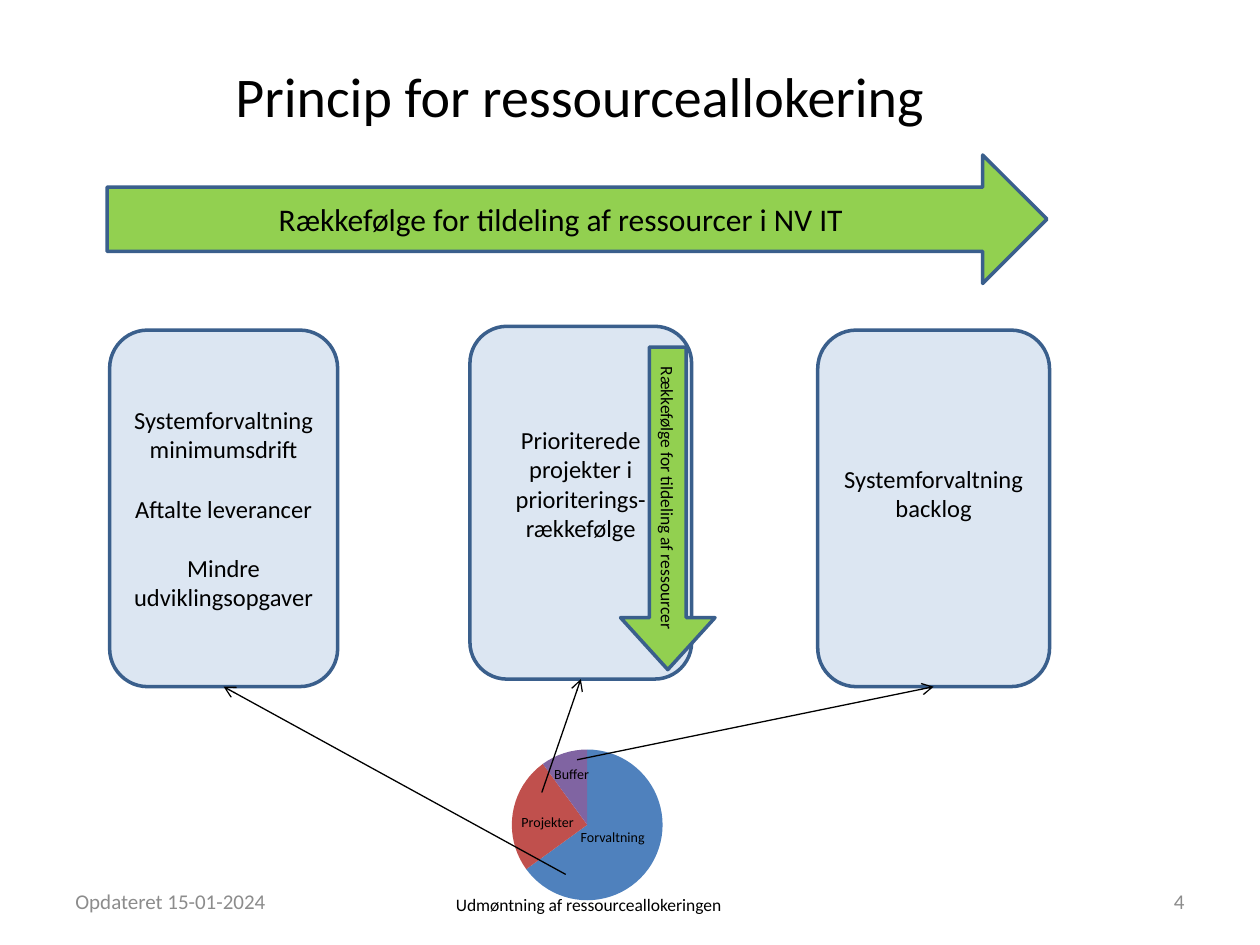
from lxml.etree import SubElement
from pptx import Presentation
from pptx.chart.data import CategoryChartData
from pptx.dml.color import RGBColor
from pptx.enum.chart import XL_CHART_TYPE
from pptx.enum.shapes import MSO_CONNECTOR, MSO_SHAPE
from pptx.enum.text import MSO_ANCHOR, PP_ALIGN
from pptx.oxml import parse_xml
from pptx.oxml.ns import nsdecls, qn
from pptx.util import Inches, Pt

FONT = "Calibri"
BLACK, GREY = "000000", "8C8C8C"
GREEN, PALE_BLUE, OUTLINE = "92D050", "DCE6F2", "3A5F8C"
BOTTOM = 2


def color(hex_string):
    return RGBColor.from_string(hex_string)


def write(frame, paragraphs, size, align, ink=BLACK, gap=0):
    """Fill a text frame, with gap points between its paragraphs."""
    frame.word_wrap = True
    for index, text in enumerate(paragraphs):
        para = frame.paragraphs[0] if index == 0 else frame.add_paragraph()
        para.text = text
        para.alignment = align
        para.font.name = FONT
        para.font.size = Pt(size)
        para.font.color.rgb = color(ink)
        if index:
            para.space_before = Pt(gap)


def add_label(page, text, left, top, width, height, size, ink=BLACK,
              align=PP_ALIGN.LEFT, anchor=MSO_ANCHOR.TOP):
    box = page.shapes.add_textbox(Inches(left), Inches(top), Inches(width), Inches(height))
    box.text_frame.vertical_anchor = anchor
    write(box.text_frame, [text], size, align, ink)


def add_block(page, kind, left, top, width, height, fill, paragraphs, size, gap=0):
    """Add an outlined shape with centred text."""
    block = page.shapes.add_shape(kind, Inches(left), Inches(top), Inches(width), Inches(height))
    block.shadow.inherit = False
    block.fill.solid()
    block.fill.fore_color.rgb = color(fill)
    block.line.color.rgb = color(OUTLINE)
    block.line.width = Pt(2)
    block.text_frame.vertical_anchor = MSO_ANCHOR.MIDDLE
    write(block.text_frame, paragraphs, size, PP_ALIGN.CENTER, gap=gap)
    return block


def add_pointer(page, left, top, target):
    """Add an arrow from a point to the bottom of the target."""
    pointer = page.shapes.add_connector(
        MSO_CONNECTOR.STRAIGHT, Inches(left), Inches(top), Inches(left), Inches(top))
    pointer.end_connect(target, BOTTOM)
    pointer.line.color.rgb = color(BLACK)
    pointer.line.width = Pt(0.75)
    SubElement(pointer.line._get_or_add_ln(), qn("a:tailEnd"), type="arrow")
    SubElement(pointer._element.spPr, qn("a:effectLst"))


def add_allocation_pie(page):
    data = CategoryChartData()
    data.categories = ["1", "2", "3", "4"]
    data.add_series("Series 1", (65, 25, 0, 10))
    chart = page.shapes.add_chart(
        XL_CHART_TYPE.PIE, Inches(3.72), Inches(5.8), Inches(1.9), Inches(1.48), data).chart
    chart.has_legend = False
    chart.has_title = False
    chart.font.name = FONT
    chart.font.size = Pt(18)
    chart.font.color.rgb = color(BLACK)
    plot = chart.plots[0]
    plot.vary_by_categories = True
    for index, fill in enumerate(("4F81BD", "C0504D", "9BBB59", "8064A2")):
        slice_format = plot.series[0].points[index].format
        slice_format.fill.solid()
        slice_format.fill.fore_color.rgb = color(fill)
    area = chart._chartSpace.chart.plotArea
    for old_layout in area.findall(qn("c:layout")):
        area.remove(old_layout)
    area.insert(0, parse_xml(
        f'<c:layout {nsdecls("c")}><c:manualLayout><c:layoutTarget val="inner"/>'
        '<c:xMode val="edge"/><c:yMode val="edge"/><c:x val="0.18"/><c:y val="0.1"/>'
        '<c:w val="0.63"/><c:h val="0.81"/></c:manualLayout></c:layout>'))


def main():
    deck = Presentation()
    deck.slide_width, deck.slide_height = Inches(10), Inches(7.5)
    page = deck.slides.add_slide(deck.slide_layouts[6])

    add_allocation_pie(page)
    add_block(page, MSO_SHAPE.RIGHT_ARROW, 0.85, 1.23, 7.46, 1.02, GREEN,
              ["Rækkefølge for tildeling af ressourcer i NV IT"], 18)

    maintenance = add_block(
        page, MSO_SHAPE.ROUNDED_RECTANGLE, 0.87, 2.62, 1.81, 2.83, PALE_BLUE,
        ["Systemforvaltning minimumsdrift", "Aftalte leverancer",
         "Mindre udviklingsopgaver"], 14, gap=17)
    projects = add_block(
        page, MSO_SHAPE.ROUNDED_RECTANGLE, 3.73, 2.59, 1.76, 2.8, PALE_BLUE,
        ["Prioriterede projekter i prioriterings-rækkefølge"], 14)
    projects.text_frame.margin_bottom = Inches(0.35)
    backlog = add_block(
        page, MSO_SHAPE.ROUNDED_RECTANGLE, 6.49, 2.62, 1.84, 2.83, PALE_BLUE,
        ["Systemforvaltning backlog"], 14)
    backlog.text_frame.margin_bottom = Inches(0.29)

    add_label(page, "Princip for ressourceallokering", 1.77, 0.44, 7.28, 0.64, 32)
    order = add_block(page, MSO_SHAPE.RIGHT_ARROW, 4.02, 3.66, 2.56, 0.75, GREEN,
                      ["Rækkefølge for tildeling af ressourcer"], 10)
    order.rotation = 90
    order.adjustments[0], order.adjustments[1] = 0.39, 0.55

    add_label(page, "Opdateret 15-01-2024", 0.5, 6.95, 2.33, 0.4, 12, GREY,
              anchor=MSO_ANCHOR.MIDDLE)
    add_label(page, "4", 7.17, 6.95, 2.33, 0.4, 12, GREY, PP_ALIGN.RIGHT, MSO_ANCHOR.MIDDLE)
    add_label(page, "Forvaltning", 4.51, 6.53, 0.89, 0.24, 8)
    add_label(page, "Buffer", 4.3, 6.03, 0.55, 0.24, 8)
    add_label(page, "Projekter", 4.04, 6.41, 0.89, 0.24, 8)
    add_label(page, "Udmøntning af ressourceallokeringen", 3.52, 7.05, 2.66, 0.27, 10)

    add_pointer(page, 4.58, 6.03, backlog)
    add_pointer(page, 4.49, 6.94, maintenance)
    add_pointer(page, 4.3, 6.29, projects)

    deck.save("out.pptx")


if __name__ == "__main__":
    main()
